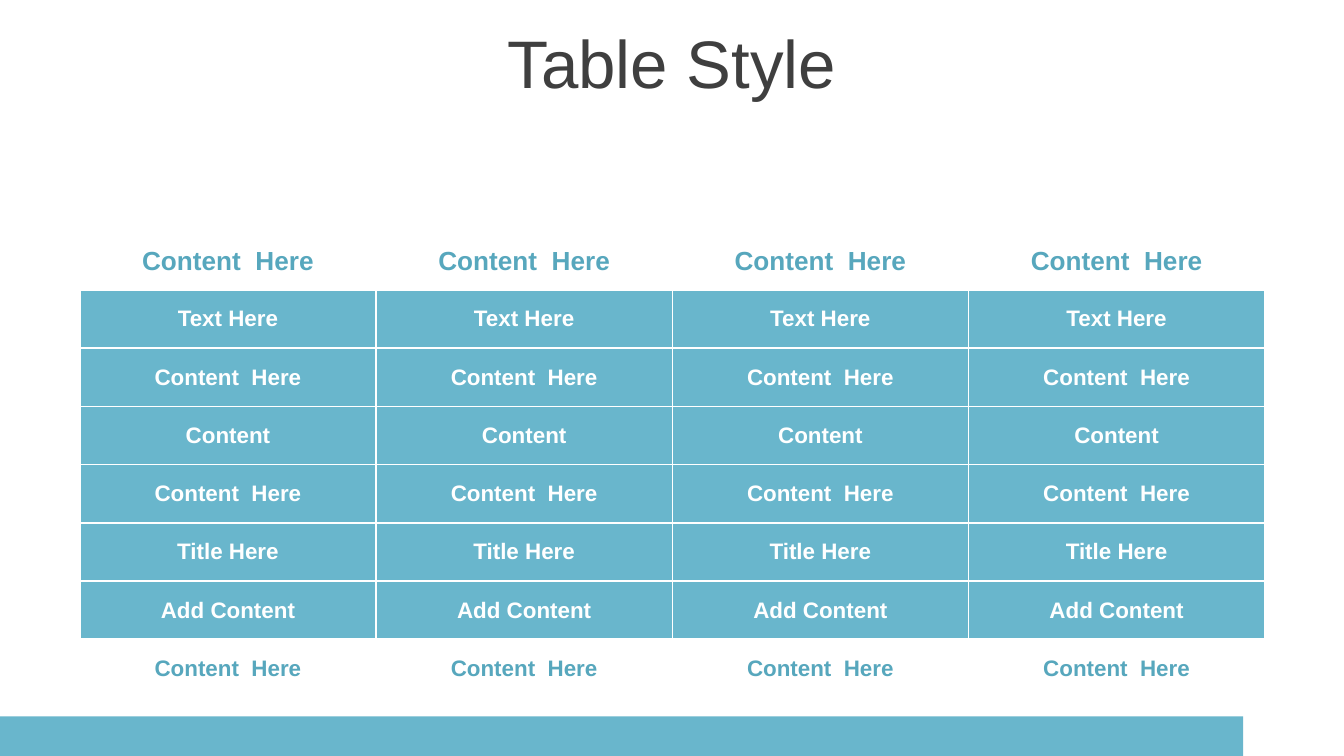
from dataclasses import dataclass

import pptx
import pptx.dml.color
import pptx.enum.shapes
import pptx.enum.text
import pptx.oxml
import pptx.oxml.ns
import pptx.util

COLOURS = {
    "white": "FFFFFF",
    "blue": "69B6CC",
    "dark_blue": "57A7BD",
    "title": "3F3F3F",
}
COLUMN_COUNT = 4
COLUMN_WIDTH = 158.7
ROW_HEIGHT = 31.2
BORDER_WIDTH = 1


@dataclass
class TableRow:
    label: str
    fill: str = "blue"
    text_colour: str = "white"
    size: float = 12


ROWS = [
    TableRow("Content  Here", "white", "dark_blue", 14),
    TableRow("Text Here"),
    TableRow("Content  Here"),
    TableRow("Content"),
    TableRow("Content  Here"),
    TableRow("Title Here"),
    TableRow("Add Content"),
    TableRow("Content  Here", "white", "dark_blue"),
]


def points(*lengths: float) -> list[pptx.util.Length]:
    return [pptx.util.Pt(length) for length in lengths]


def colour(name: str) -> pptx.dml.color.RGBColor:
    return pptx.dml.color.RGBColor.from_string(COLOURS[name])


def set_fill(target, name: str) -> None:
    target.fill.solid()
    target.fill.fore_color.rgb = colour(name)


def write_text(text_frame, text: str, text_colour: str, size: float, bold: bool) -> None:
    paragraph = text_frame.paragraphs[0]
    paragraph.text = text
    paragraph.alignment = pptx.enum.text.PP_ALIGN.CENTER
    font_format = {"name": "Arial", "size": pptx.util.Pt(size), "bold": bold}
    for attribute, value in font_format.items():
        setattr(paragraph.font, attribute, value)
    paragraph.font.color.rgb = colour(text_colour)


def add_borders(cell) -> None:
    """Put white lines on all four sides, ahead of the fill as the schema requires."""
    properties = cell._tc.get_or_add_tcPr()
    for position, side in enumerate(("lnL", "lnR", "lnT", "lnB")):
        line = pptx.oxml.parse_xml(
            f'<a:{side} {pptx.oxml.ns.nsdecls("a")} w="{pptx.util.Pt(BORDER_WIDTH)}">'
            f'<a:solidFill><a:srgbClr val="{COLOURS["white"]}"/></a:solidFill></a:{side}>'
        )
        properties.insert(position, line)


def add_footer_bar(slide) -> None:
    bar = slide.shapes.add_shape(
        pptx.enum.shapes.MSO_SHAPE.RECTANGLE, *points(0, 383.8, 666, 21.2)
    )
    bar.shadow.inherit = False
    set_fill(bar, "blue")
    bar.line.fill.background()


def add_title(slide) -> None:
    text_frame = slide.shapes.add_textbox(*points(0, 10.2, 720, 45.4)).text_frame
    text_frame.word_wrap = True
    text_frame.vertical_anchor = pptx.enum.text.MSO_ANCHOR.MIDDLE
    write_text(text_frame, "Table Style", "title", 36, False)


def add_content_table(slide, rows: list[TableRow]) -> None:
    size = points(COLUMN_WIDTH * COLUMN_COUNT, ROW_HEIGHT * len(rows))
    table = slide.shapes.add_table(
        len(rows), COLUMN_COUNT, *points(42.8, 124.2), *size
    ).table
    table.first_row = table.horz_banding = False
    for row, table_row in zip(rows, table.rows):
        for cell in table_row.cells:
            cell.vertical_anchor = pptx.enum.text.MSO_ANCHOR.MIDDLE
            set_fill(cell, row.fill)
            add_borders(cell)
            write_text(cell.text_frame, row.label, row.text_colour, row.size, True)


def main() -> None:
    presentation = pptx.Presentation()
    presentation.slide_width, presentation.slide_height = points(720, 405)
    slide = presentation.slides.add_slide(presentation.slide_layouts[6])
    add_footer_bar(slide)
    add_title(slide)
    add_content_table(slide, ROWS)
    presentation.save("out.pptx")


if __name__ == "__main__":
    main()
